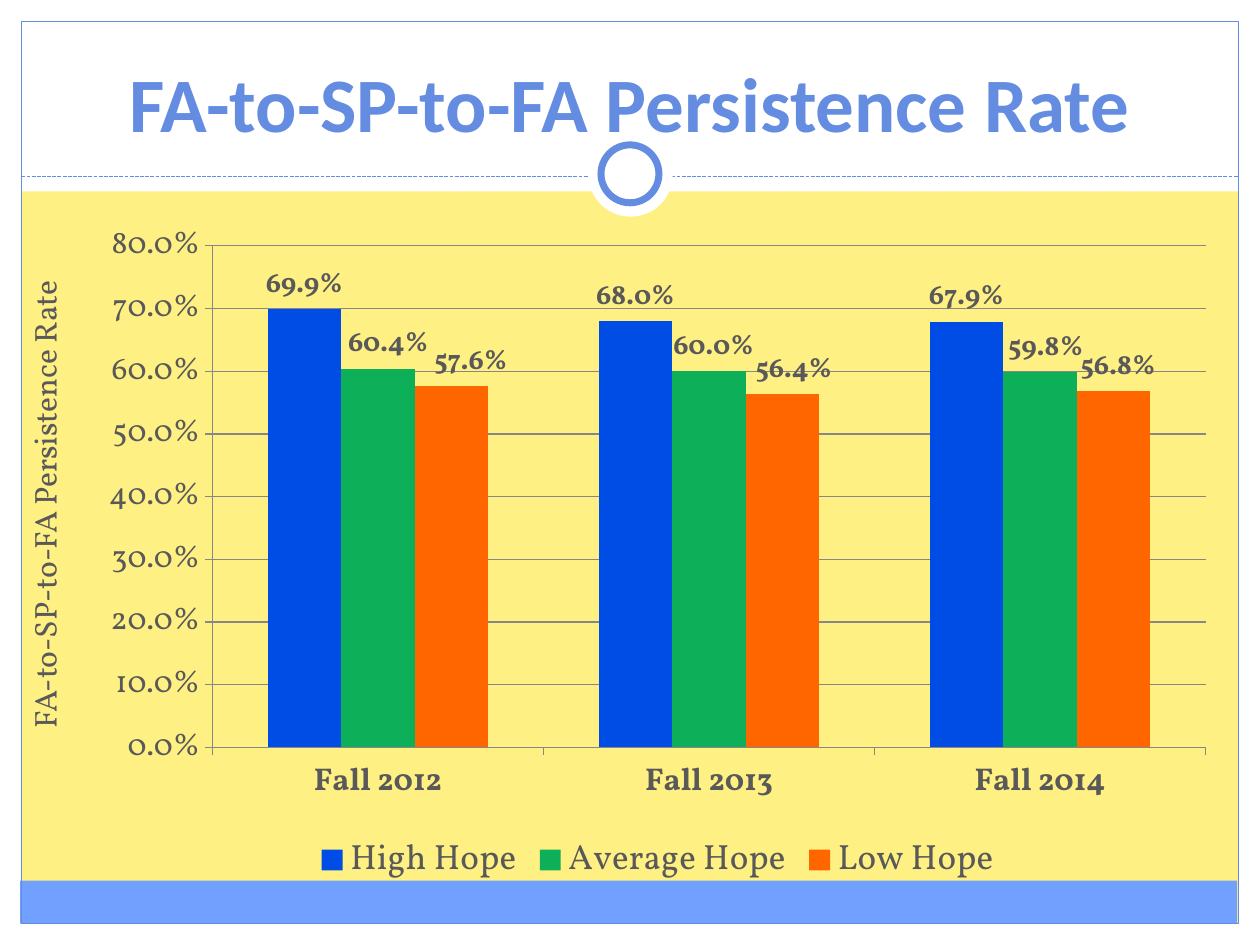
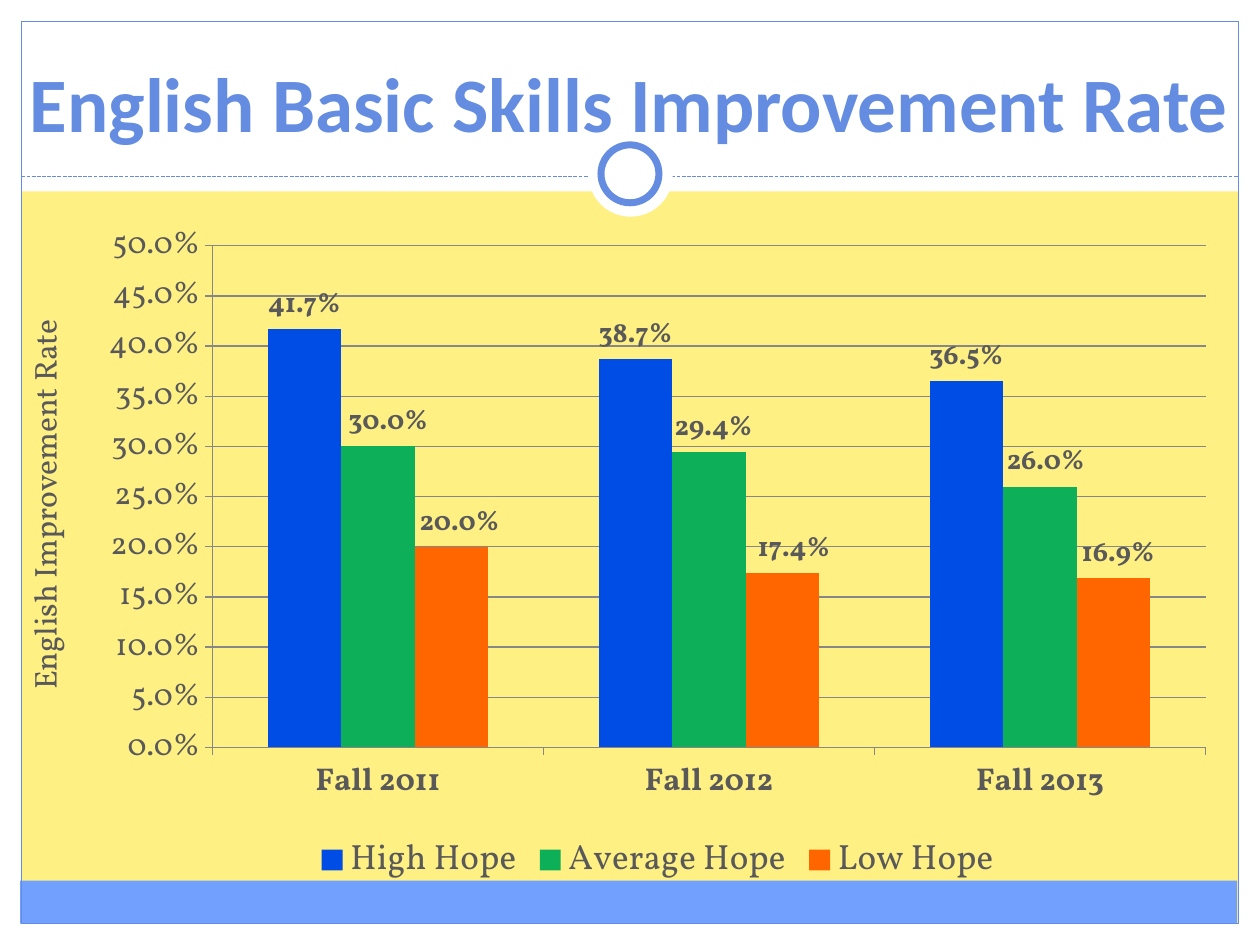
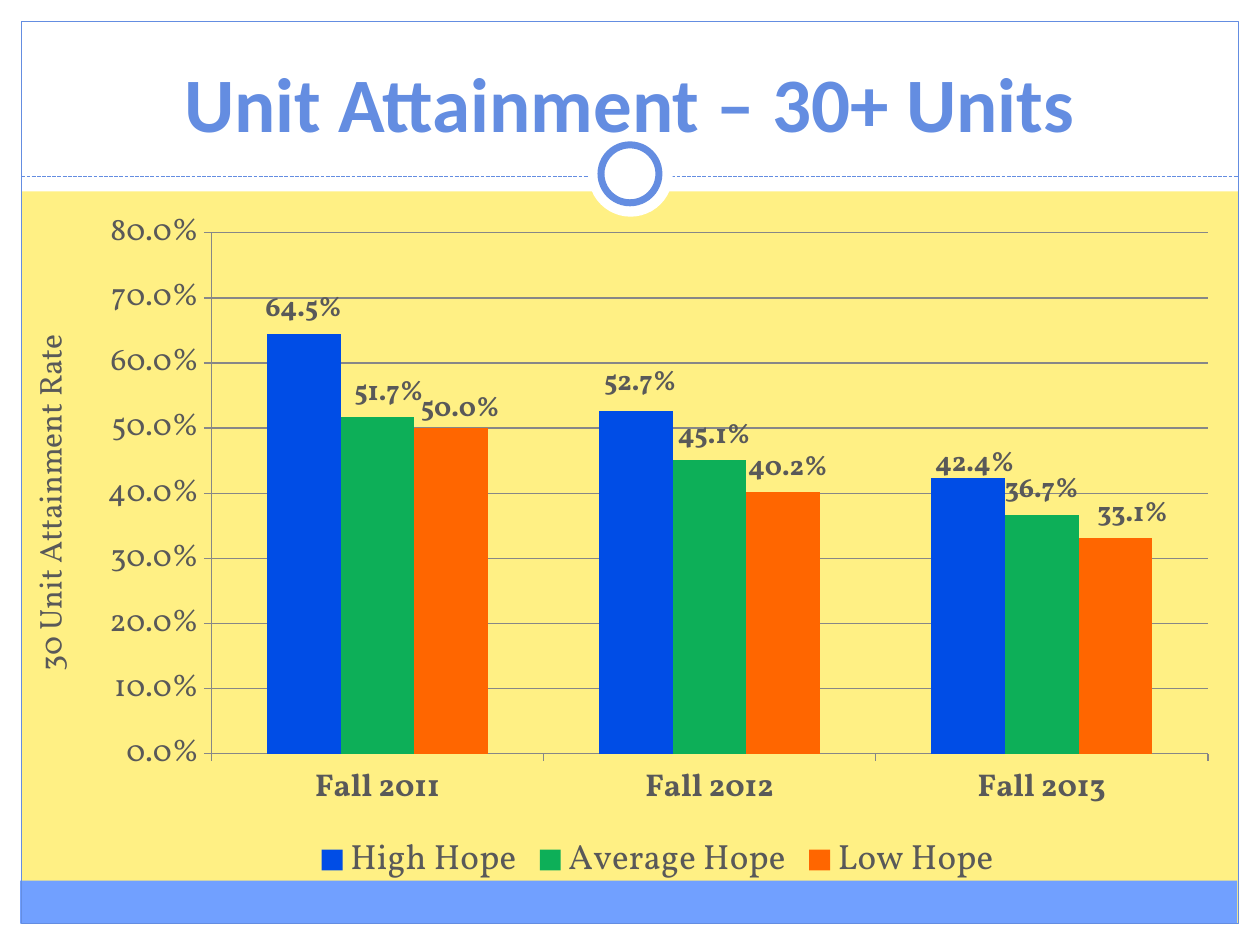
from dataclasses import dataclass

from lxml.etree import SubElement
from pptx import Presentation
from pptx.chart.chart import Chart
from pptx.chart.data import CategoryChartData
from pptx.dml.color import RGBColor
from pptx.enum.chart import XL_CHART_TYPE, XL_LABEL_POSITION, XL_LEGEND_POSITION, XL_TICK_MARK
from pptx.enum.dml import MSO_LINE
from pptx.enum.shapes import MSO_CONNECTOR, MSO_SHAPE
from pptx.enum.text import MSO_ANCHOR, PP_ALIGN
from pptx.oxml import parse_xml
from pptx.oxml.ns import nsdecls, qn
from pptx.slide import Slide
from pptx.util import Inches, Pt

YELLOW, WHITE, BLUE, BAND = "FFF084", "FFFFFF", "648DE1", "71A0FF"
GRAY, GRID = "595959", "878787"
TITLE_FONT, BODY_FONT = "Calibri", "Vollkorn"
RATE_FORMAT = "0.0%"
HOPE_LEVELS = (("High Hope", "004DE6"), ("Average Hope", "0DAF58"), ("Low Hope", "FF6600"))

Box = tuple[float, float, float, float]
Nudge = tuple[float, float]


@dataclass(frozen=True)
class Decor:
    """A shape of the shared slide frame."""
    box: Box
    fill: str | None = None
    line_width: float = 0
    kind: MSO_SHAPE = MSO_SHAPE.RECTANGLE


@dataclass(frozen=True)
class RateSlide:
    """Content of one slide; nudges move labels by fractions of the chart."""
    title: str
    axis_title: str
    years: tuple[str, ...]
    rates: tuple[tuple[float, ...], ...]
    nudges: tuple[tuple[Nudge, ...], ...]
    top_rate: float
    step: float
    title_box: Box = (0, -0.03, 10, 1.25)
    axis_box: Box = (0.15, 1.88, 0.5, 4.25)
    plot: Box = (0.11, 0.052, 0.87, 0.736)


FRAME = (
    Decor((0, 7.33, 10, 0.17), WHITE),
    Decor((0, 0, 10, 1.52), WHITE),
    Decor((0, 0, 0.17, 7.5), WHITE),
    Decor((9.83, 0, 0.17, 7.5), WHITE),
    Decor((0.16, 6.99, 9.66, 0.34), BAND),
    Decor((0.17, 0.17, 9.66, 7.16), None, 0.75),
)
RING = (
    Decor((4.67, 1.05, 0.67, 0.67), WHITE, 0, MSO_SHAPE.OVAL),
    Decor((4.77, 1.15, 0.46, 0.46), WHITE, 4, MSO_SHAPE.OVAL),
)

STILL = (0, 0)
SLIDES = (
    RateSlide(
        "FA-to-SP-to-FA Persistence Rate", "FA-to-SP-to-FA Persistence Rate",
        ("Fall 2012", "Fall 2013", "Fall 2014"),
        ((0.699, 0.68, 0.679), (0.604, 0.6, 0.598), (0.576, 0.564, 0.568)),
        ((STILL,) * 3,
         ((0.009, 0), (0.004, 0), (0.005, 0)),
         ((0.017, 0), (0.01, 0), (0.004, 0))),
        0.8, 0.1,
    ),
    RateSlide(
        "English Basic Skills Improvement Rate", "English Improvement Rate",
        ("Fall 2011", "Fall 2012", "Fall 2013"),
        ((0.417, 0.387, 0.365), (0.3, 0.294, 0.26), (0.2, 0.174, 0.169)),
        ((STILL,) * 3,
         ((0.009, 0), (0.004, 0), (0.005, 0)),
         ((0.007, 0), (0.01, 0), (0.004, 0))),
        0.5, 0.05,
    ),
    RateSlide(
        "Unit Attainment – 30+ Units", "30 Unit Attainment Rate",
        ("Fall 2011", "Fall 2012", "Fall 2013"),
        ((0.645, 0.527, 0.424), (0.517, 0.451, 0.367), (0.5, 0.402, 0.331)),
        ((STILL, (0.004, -0.005), (0.006, 0.015)),
         ((0.01, 0), (0.004, 0), STILL),
         ((0.008, 0.007), (0.004, 0), (0.015, 0))),
        0.8, 0.1,
        title_box=(0.25, -0.03, 9.5, 1.25),
        axis_box=(0.19, 2.2, 0.5, 3.58),
        plot=(0.109, 0.033, 0.873, 0.764),
    ),
)


def rgb(color: str) -> RGBColor:
    """Turn a hex string into a colour."""
    return RGBColor.from_string(color)


def set_font(font, size: float, bold: bool = False, name: str = BODY_FONT, color: str = GRAY) -> None:
    """Set size, weight, typeface and colour of a font."""
    font.size, font.bold, font.name = Pt(size), bold, name
    font.color.rgb = rgb(color)


def add_decor(s: Slide, decor: Decor) -> None:
    """Draw one frame shape."""
    sp = s.shapes.add_shape(decor.kind, *map(Inches, decor.box))
    sp.shadow.inherit = False
    if decor.fill:
        sp.fill.solid()
        sp.fill.fore_color.rgb = rgb(decor.fill)
    else:
        sp.fill.background()
    if decor.line_width:
        sp.line.color.rgb = rgb(BLUE)
        sp.line.width = Pt(decor.line_width)
    else:
        sp.line.fill.background()


def add_frame(s: Slide) -> None:
    """Draw the background, bands, dashed rule and ring."""
    s.background.fill.solid()
    s.background.fill.fore_color.rgb = rgb(YELLOW)
    for decor in FRAME:
        add_decor(s, decor)
    rule = s.shapes.add_connector(
        MSO_CONNECTOR.STRAIGHT, Inches(0.17), Inches(1.4), Inches(9.83), Inches(1.4))
    rule.line.color.rgb = rgb(BLUE)
    rule.line.width = Pt(0.75)
    rule.line.dash_style = MSO_LINE.SQUARE_DOT
    SubElement(rule.element.spPr, qn("a:effectLst"))
    for decor in RING:
        add_decor(s, decor)


def add_text(s: Slide, box: Box, text: str):
    """Add a centred text box and return its frame."""
    tf = s.shapes.add_textbox(*map(Inches, box)).text_frame
    tf.word_wrap = True
    tf.text = text
    tf.paragraphs[0].alignment = PP_ALIGN.CENTER
    return tf


def manual_layout(x: float, y: float, size: tuple[float, float] | None = None):
    """Build a chart layout; with a size it fixes the inner plot area."""
    values = [("x", x), ("y", y)]
    modes = ""
    if size:
        values += [("w", size[0]), ("h", size[1])]
        modes = ('<c:layoutTarget val="inner"/>'
                 '<c:xMode val="edge"/><c:yMode val="edge"/>')
    parts = "".join(f'<c:{name} val="{value}"/>' for name, value in values)
    return parse_xml(f'<c:layout {nsdecls("c")}><c:manualLayout>{modes}{parts}'
                     '</c:manualLayout></c:layout>')


def style_axes(chart: Chart, content: RateSlide) -> None:
    """Set scale, ticks, lines and fonts of both axes."""
    for axis, bold in ((chart.category_axis, True), (chart.value_axis, False)):
        axis.major_tick_mark = XL_TICK_MARK.OUTSIDE
        axis.minor_tick_mark = XL_TICK_MARK.NONE
        axis.format.line.color.rgb = rgb(GRID)
        axis.format.line.width = Pt(0.75)
        set_font(axis.tick_labels.font, 18, bold)
    axis = chart.value_axis
    axis.minimum_scale, axis.maximum_scale = 0, content.top_rate
    axis.major_unit = content.step
    axis.tick_labels.number_format = RATE_FORMAT
    axis.tick_labels.number_format_is_linked = False
    axis.major_gridlines.format.line.color.rgb = rgb(GRID)
    axis.major_gridlines.format.line.width = Pt(0.75)


def style_series(chart: Chart, content: RateSlide) -> None:
    """Colour the columns and place their value labels."""
    for n, (series, (_, color)) in enumerate(zip(chart.plots[0].series, HOPE_LEVELS)):
        series.format.fill.solid()
        series.format.fill.fore_color.rgb = rgb(color)
        labels = series.data_labels
        labels.show_value = True
        labels.number_format = RATE_FORMAT
        labels.number_format_is_linked = False
        labels.position = XL_LABEL_POSITION.OUTSIDE_END
        set_font(labels.font, 16, True)
        for i, nudge in enumerate(content.nudges[n]):
            if nudge == STILL:
                continue
            label = series.points[i].data_label
            label.position = XL_LABEL_POSITION.OUTSIDE_END
            set_font(label.font, 16, True)
            idx = chart.element.xpath(f'.//c:ser[{n + 1}]//c:dLbl/c:idx[@val="{i}"]')[0]
            idx.addnext(manual_layout(*nudge))


def add_rate_chart(s: Slide, content: RateSlide) -> None:
    """Add the clustered column chart of rates by hope level."""
    data = CategoryChartData(number_format=RATE_FORMAT)
    data.categories = content.years
    for (name, _), rates in zip(HOPE_LEVELS, content.rates):
        data.add_series(name, rates)
    box = map(Inches, (0.69, 1.67, 9.06, 5.41))
    chart = s.shapes.add_chart(XL_CHART_TYPE.COLUMN_CLUSTERED, *box, data).chart
    set_font(chart.font, 18)
    chart.has_title = False
    chart.has_legend = True
    chart.legend.position = XL_LEGEND_POSITION.BOTTOM
    chart.legend.include_in_layout = False
    set_font(chart.legend.font, 20)
    chart.plots[0].gap_width = 150
    chart.plots[0].vary_by_categories = False
    style_axes(chart, content)
    style_series(chart, content)
    plot_area = chart.element.xpath(".//c:plotArea")[0]
    for layout in plot_area.findall(qn("c:layout")):
        plot_area.remove(layout)
    x, y, w, h = content.plot
    plot_area.insert(0, manual_layout(x, y, (w, h)))


def add_rate_slide(prs: Presentation, content: RateSlide) -> None:
    """Build one complete slide."""
    s = prs.slides.add_slide(prs.slide_layouts[6])
    add_frame(s)
    tf = add_text(s, content.title_box, content.title)
    tf.vertical_anchor = MSO_ANCHOR.BOTTOM
    set_font(tf.paragraphs[0].font, 44, True, TITLE_FONT, BLUE)
    tf = add_text(s, content.axis_box, content.axis_title)
    tf._txBody.bodyPr.set("vert", "vert270")
    set_font(tf.paragraphs[0].font, 18)
    add_rate_chart(s, content)


def main() -> None:
    """Build and save the presentation."""
    prs = Presentation()
    prs.slide_width, prs.slide_height = Inches(10), Inches(7.5)
    for content in SLIDES:
        add_rate_slide(prs, content)
    prs.save("out.pptx")


if __name__ == "__main__":
    main()
